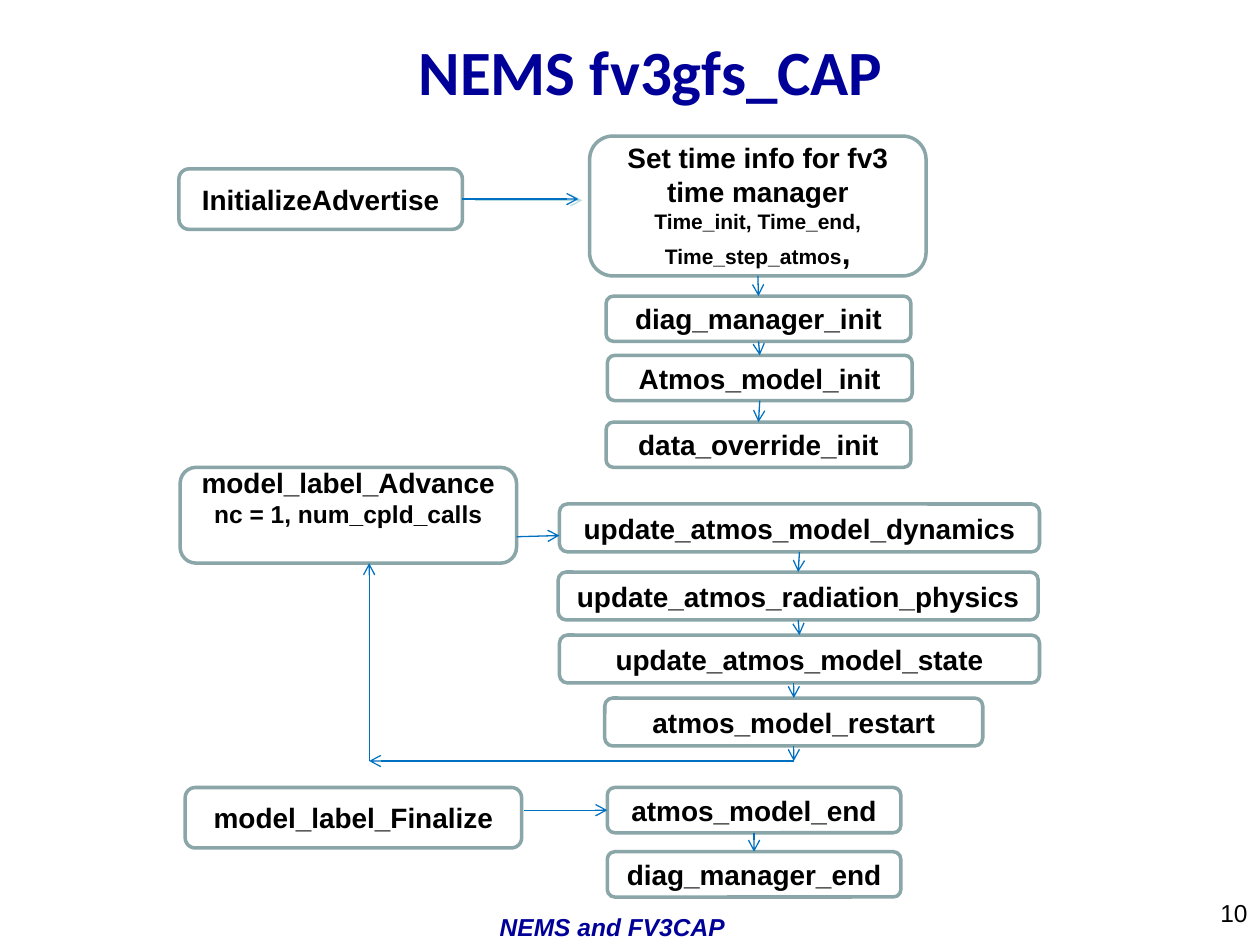
from lxml import etree
from pptx import Presentation
from pptx.dml.color import RGBColor
from pptx.enum.shapes import MSO_CONNECTOR, MSO_SHAPE
from pptx.enum.text import MSO_ANCHOR as Anchor, PP_ALIGN as Align
from pptx.oxml.ns import qn
from pptx.util import Inches, Pt

WHITE = RGBColor(0xFF, 0xFF, 0xFF)
BLACK = RGBColor(0x00, 0x00, 0x00)
NAVY = RGBColor(0x00, 0x00, 0x99)
SAGE = RGBColor(0x8A, 0xA6, 0xA8)
BLUE = RGBColor(0x00, 0x70, 0xC0)
PALE_TEAL = RGBColor(0xB6, 0xDC, 0xDF)


class FlowSlide:
    def __init__(self, slide, font="Arial", size=16):
        self.slide = slide
        self.font = font
        self.size = size

    def format_run(self, run, size, color=BLACK, bold=True, italic=False, font=None):
        run.font.name = font or self.font
        run.font.size = Pt(size)
        run.font.bold = bold
        run.font.italic = italic
        run.font.color.rgb = color

    def label(self, text, left, top, width, height, size, align=Align.CENTER,
              anchor=Anchor.TOP, **style):
        shape = self.slide.shapes.add_textbox(
            Inches(left), Inches(top), Inches(width), Inches(height))
        frame = shape.text_frame
        frame.word_wrap = True
        frame.vertical_anchor = anchor
        frame.text = text
        frame.paragraphs[0].alignment = align
        self.format_run(frame.paragraphs[0].runs[0], size, **style)

    def box(self, text, left, top, width, height, detail=None, detail_size=12):
        shape = self.slide.shapes.add_shape(
            MSO_SHAPE.ROUNDED_RECTANGLE,
            Inches(left), Inches(top), Inches(width), Inches(height))
        shape.shadow.inherit = False
        shape.fill.solid()
        shape.fill.fore_color.rgb = WHITE
        shape.line.color.rgb = SAGE
        shape.line.width = Pt(2)
        frame = shape.text_frame
        frame.word_wrap = True
        frame.vertical_anchor = Anchor.MIDDLE
        frame.text = text
        self.format_run(frame.paragraphs[0].runs[0], self.size)
        if detail:
            paragraph = frame.add_paragraph()
            paragraph.text = detail
            self.format_run(paragraph.runs[0], detail_size)
        for paragraph in frame.paragraphs:
            paragraph.alignment = Align.CENTER
        return shape

    def arrow(self, start, end, color=BLUE):
        connector = self.slide.shapes.add_connector(
            MSO_CONNECTOR.STRAIGHT, *map(Inches, start + end))
        connector.line.color.rgb = color
        connector.line.width = Pt(0.75)
        properties = connector._element.spPr
        etree.SubElement(properties.get_or_add_ln(), qn("a:tailEnd"), type="arrow")
        etree.SubElement(properties, qn("a:effectLst"))

    def chain(self, boxes):
        for upper, lower in zip(boxes, boxes[1:]):
            self.arrow(
                ((upper.left + upper.width / 2) / Inches(1),
                 (upper.top + upper.height) / Inches(1)),
                ((lower.left + lower.width / 2) / Inches(1), lower.top / Inches(1)))


def main():
    presentation = Presentation()
    presentation.slide_width = Inches(10)
    presentation.slide_height = Inches(7.5)
    flow = FlowSlide(presentation.slides.add_slide(presentation.slide_layouts[6]))

    flow.label("NEMS fv3gfs_CAP", 0.36, 0.22, 9.61, 0.67, 36,
               anchor=Anchor.MIDDLE, color=NAVY, font="Calibri")

    flow.box("InitializeAdvertise", 1.42, 1.34, 2.25, 0.48)
    advance = flow.box("model_label_Advance", 1.43, 3.71, 2.67, 0.76,
                       "nc = 1, num_cpld_calls", 14)
    advance.text_frame.margin_top = 0
    advance.text_frame.margin_bottom = Inches(0.29)
    flow.box("model_label_Finalize", 1.47, 6.25, 2.67, 0.48)

    time_info = flow.box("Set time info for fv3 time manager", 4.68, 1.08, 2.67, 1.11,
                         "Time_init, Time_end, Time_step_atmos")
    comma = time_info.text_frame.paragraphs[1].add_run()
    comma.text = ","
    flow.format_run(comma, 18)

    init_steps = [("diag_manager_init", 4.81, 2.35),
                  ("Atmos_model_init", 4.82, 2.82),
                  ("data_override_init", 4.81, 3.35)]
    update_steps = [("update_atmos_model_dynamics", 4.44, 4),
                    ("update_atmos_radiation_physics", 4.43, 4.54),
                    ("update_atmos_model_state", 4.44, 5.04)]
    end_steps = [("atmos_model_end", 4.82, 6.25), ("diag_manager_end", 4.82, 6.76)]

    flow.chain([time_info] + [flow.box(*step, 2.42, 0.36) for step in init_steps])
    flow.chain([flow.box(*step, 3.81, 0.38) for step in update_steps])
    flow.chain([flow.box(*step, 2.33, 0.36) for step in end_steps])
    flow.box("atmos_model_restart", 4.8, 5.54, 3, 0.38)

    flow.arrow((3.77, 1.59), (4.62, 1.59), PALE_TEAL)
    flow.arrow((3.67, 1.58), (4.59, 1.58))
    flow.arrow((4.1, 4.26), (4.44, 4.25))
    flow.arrow((4.16, 6.43), (4.82, 6.43))

    loop = [(6.3, 5.92), (6.3, 6.04), (2.93, 6.04), (2.93, 4.47)]
    flow.arrow((6.3, 5.42), (6.3, 5.54))
    for start, end in zip(loop, loop[1:]):
        flow.arrow(start, end)

    flow.label("NEMS and FV3CAP", 0.9, 7.19, 7.92, 0.35, 14, color=NAVY, italic=True)
    flow.label("10", 7.67, 7.08, 2.33, 0.42, 14, align=Align.RIGHT, bold=False)

    presentation.save("out.pptx")


if __name__ == "__main__":
    main()
